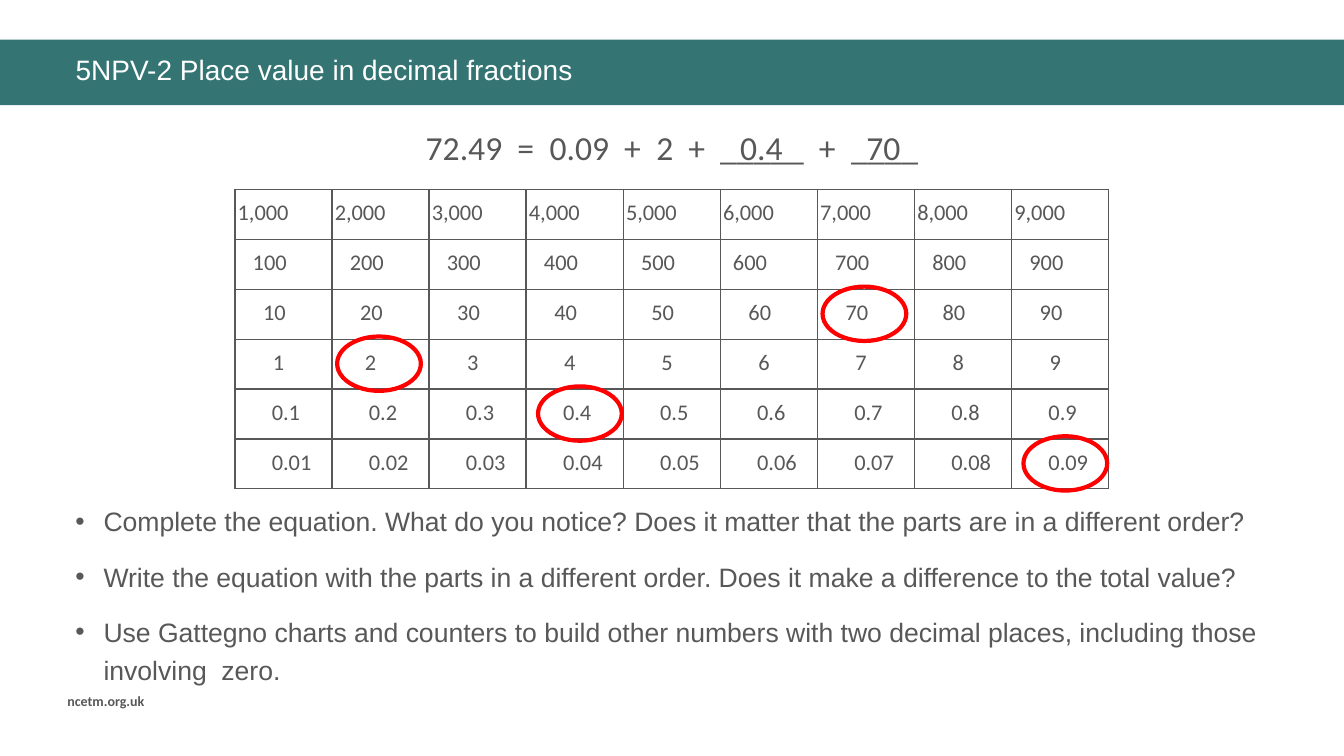
from dataclasses import dataclass

from lxml.etree import SubElement
from pptx import Presentation
from pptx.dml.color import RGBColor
from pptx.enum.shapes import MSO_SHAPE
from pptx.enum.text import MSO_ANCHOR, MSO_AUTO_SIZE, PP_ALIGN
from pptx.oxml.ns import qn
from pptx.util import Cm, Pt


@dataclass(frozen=True)
class Theme:
    heading_font: str = "Arial"
    number_font: str = "Calibri"
    band: RGBColor = RGBColor(0x34, 0x75, 0x74)
    ink: RGBColor = RGBColor(0x58, 0x58, 0x58)
    white: RGBColor = RGBColor(0xFF, 0xFF, 0xFF)
    ring: RGBColor = RGBColor(0xFF, 0x00, 0x00)
    title_size: int = 20
    equation_size: int = 24
    chart_size: int = 16
    prompt_size: int = 19
    footer_size: int = 10


class Slide:
    def __init__(self, deck, theme):
        self.theme = theme
        self.page = deck.slides.add_slide(deck.slide_layouts[5])

    def style(self, paragraph, size, font=None, color=None, **extra):
        values = {
            "name": font or self.theme.number_font,
            "size": Pt(size),
            **extra,
        }
        for name, value in values.items():
            setattr(paragraph.font, name, value)
        paragraph.font.color.rgb = color or self.theme.ink

    def place(self, shape, left, top, width, height):
        frame = {"left": left, "top": top, "width": width, "height": height}
        for name, value in frame.items():
            setattr(shape, name, Cm(value))

    def band(self, top, width, height):
        band = self.page.shapes.add_shape(
            MSO_SHAPE.RECTANGLE, 0, Cm(top), width, Cm(height))
        band.shadow.inherit = False
        band.fill.solid()
        band.fill.fore_color.rgb = self.theme.band
        band.line.fill.background()
        self.page.shapes._spTree.insert(2, band._element)

    def title(self, text, *frame):
        title = self.page.shapes.title
        self.place(title, *frame)
        box = title.text_frame
        box.text = text
        box.auto_size = MSO_AUTO_SIZE.NONE
        box.vertical_anchor = MSO_ANCHOR.TOP
        paragraph = box.paragraphs[0]
        paragraph.alignment = PP_ALIGN.LEFT
        paragraph.line_spacing = 0.9
        self.style(paragraph, self.theme.title_size,
                   self.theme.heading_font, self.theme.white)

    def text(self, text, frame, size, align=PP_ALIGN.LEFT, tabs=(),
             indent=0, **extra):
        box = self.page.shapes.add_textbox(*map(Cm, frame)).text_frame
        box.word_wrap = True
        paragraph = box.paragraphs[0]
        paragraph.text = text
        paragraph.alignment = align
        properties = paragraph._p.get_or_add_pPr()
        if indent:
            properties.set("marL", str(Cm(indent)))
        if tabs:
            stops = SubElement(properties, qn("a:tabLst"))
            for position in tabs:
                SubElement(stops, qn("a:tab"), pos=str(Cm(position)), algn="l")
        self.style(paragraph, size, **extra)

    def bullets(self, lines, *frame):
        box = self.page.shapes.add_textbox(*map(Cm, frame)).text_frame
        box.word_wrap = True
        for index, line in enumerate(lines):
            paragraph = box.add_paragraph() if index else box.paragraphs[0]
            paragraph.text = line
            paragraph.line_spacing = 1.2
            paragraph.space_before = Pt(6 if index else 0)
            paragraph.space_after = Pt(6)
            properties = paragraph._p.get_or_add_pPr()
            properties.set("marL", str(Cm(0.71)))
            properties.set("indent", str(-Cm(0.71)))
            SubElement(properties, qn("a:buFont"), typeface="Arial")
            SubElement(properties, qn("a:buChar"), char="•")
            self.style(paragraph, self.theme.prompt_size,
                       self.theme.heading_font)

    def border(self, cell):
        properties = cell._tc.get_or_add_tcPr()
        for side in ("a:lnL", "a:lnR", "a:lnT", "a:lnB"):
            line = SubElement(properties, qn(side), w=str(Pt(1)))
            fill = SubElement(line, qn("a:solidFill"))
            SubElement(fill, qn("a:srgbClr"), val=str(self.theme.ink))

    def grid(self, rows, columns, left, top, column, row):
        table = self.page.shapes.add_table(
            rows, columns, Cm(left), Cm(top),
            Cm(column * columns), Cm(row * rows)).table
        table.first_row = table.horz_banding = False
        for table_column in table.columns:
            table_column.width = Cm(column)
        for table_row in table.rows:
            table_row.height = Cm(row)
        for cell in table.iter_cells():
            self.border(cell)
            cell.fill.background()

    def ring(self, *frame):
        ring = self.page.shapes.add_shape(MSO_SHAPE.OVAL, *map(Cm, frame))
        ring.shadow.inherit = False
        ring.fill.background()
        ring.line.color.rgb = self.theme.ring
        ring.line.width = Pt(3)


def main():
    deck = Presentation()
    deck.slide_width, deck.slide_height = Cm(33.87), Cm(19.05)
    theme = Theme()
    slide = Slide(deck, theme)

    slide.band(1, deck.slide_width, 1.65)
    slide.title("5NPV-2 Place value in decimal fractions",
                1.65, 1.3, 31.29, 1.19)
    slide.text("ncetm.org.uk", (1.45, 17.32, 3.07, 0.69),
               theme.footer_size, bold=True)

    equation = ["72.49", "=", "0.09", "+", "2", "+", "_____", "+", "____"]
    slide.text("\t".join(equation), (10.48, 3.07, 13.5, 1.27),
               theme.equation_size,
               tabs=(2.31, 3.12, 5, 5.81, 6.62, 7.42, 9.91, 10.72))
    for answer, left, width in (("0.4", 18.21, 1.96), ("70", 20.73, 3.07)):
        slide.text(answer, (left, 3.07, width, 1.27),
                   theme.equation_size, PP_ALIGN.CENTER)

    slide.bullets([
        "Complete the equation. What do you notice? "
        "Does it matter that the parts are in a different order?",
        "Write the equation with the parts in a different order. "
        "Does it make a difference to the total value?",
        "Use Gattegno charts and counters to build other numbers "
        "with two decimal places, including those involving  zero.",
    ], 1.65, 12.45, 30.4, 4.17)

    left, top, column, row = 5.92, 4.78, 22.02 / 9, 7.54 / 6
    units = (1000, 100, 10, 1, 0.1, 0.01)
    indents = (0, 0.38, 0.64, 0.89, 0.76, 0.76)
    nudges = {"600": -0.13, "2": -0.13}
    rings = ("0.4", "0.09", "2", "70")
    ring_frames = []
    slide.grid(len(units), 9, left, top, column, row)
    for place in range(9):
        for line, (unit, indent) in enumerate(zip(units, indents)):
            value = f"{(place + 1) * unit:,g}"
            decimal = unit < 1
            cell_left, cell_top = left + place * column, top + line * row
            slide.text(value, (cell_left - (0.08 if decimal else 0.18),
                               cell_top + 0.1, 2.59 if decimal else 1.96,
                               0.94),
                       theme.chart_size, indent=indent + nudges.get(value, 0))
            if value in rings:
                ring_frames.append((cell_left + (0.3 if decimal else 0.13),
                                    cell_top - 0.07, 2.11, 1.37))
    for frame in ring_frames:
        slide.ring(*frame)

    deck.save("out.pptx")


if __name__ == "__main__":
    main()
